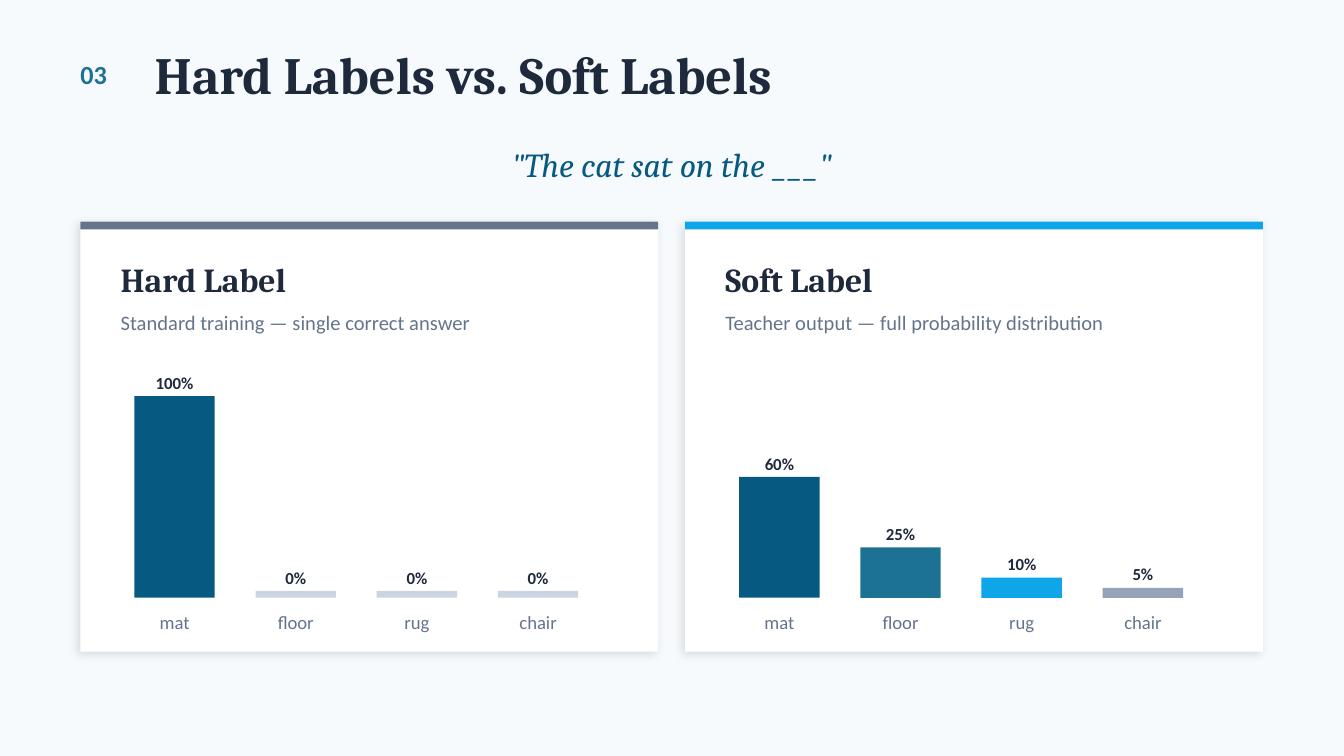
from lxml import etree
from pptx import Presentation
from pptx.dml.color import RGBColor
from pptx.enum import shapes, text
from pptx.oxml.ns import qn
from pptx.util import Cm, Pt

INK, SLATE, NAVY, TEAL, SKY = "1E293B", "64748B", "065A82", "1C7293", "0EA5E9"
PALE, GREY = "CBD5E1", "94A3B8"
SERIF, SANS = "Cambria", "Calibri"

WORDS = ["mat", "floor", "rug", "chair"]
CARDS = [
    {"title": "Hard Label", "note": "Standard training — single correct answer",
     "accent": SLATE, "values": [100, 0, 0, 0], "colors": [NAVY, PALE, PALE, PALE]},
    {"title": "Soft Label", "note": "Teacher output — full probability distribution",
     "accent": SKY, "values": [60, 25, 10, 5], "colors": [NAVY, TEAL, SKY, GREY]},
]

MARGIN, CARD_TOP, CARD_WIDTH, CARD_HEIGHT, CARD_STEP = 1.52, 4.19, 10.92, 8.13, 11.43
BAR_INSET, BAR_WIDTH, BAR_STEP = 1.02, 1.52, 2.29
BASELINE, FULL_HEIGHT, LEAST_HEIGHT = 11.3, 3.81, 0.13
LABEL_OVERHANG, VALUE_HEIGHT = 0.13, 0.51


def color(code):
    return RGBColor.from_string(code)


def write(box, words, size, font, ink, bold=False, italic=False, center=False):
    frame = box.text_frame
    frame.word_wrap = True
    frame.auto_size = text.MSO_AUTO_SIZE.NONE
    frame.vertical_anchor = text.MSO_ANCHOR.MIDDLE
    frame.margin_left = frame.margin_right = frame.margin_top = frame.margin_bottom = 0
    para = frame.paragraphs[0]
    para.alignment = text.PP_ALIGN.CENTER if center else text.PP_ALIGN.LEFT
    span = para.add_run()
    span.text = words
    span.font.size, span.font.name = Pt(size), font
    span.font.bold, span.font.italic = bold, italic
    span.font.color.rgb = color(ink)


def add_label(page, left, top, width, height, *style, **options):
    box = page.shapes.add_textbox(Cm(left), Cm(top), Cm(width), Cm(height))
    write(box, *style, **options)


def add_block(page, left, top, width, height, fill):
    block = page.shapes.add_shape(
        shapes.MSO_SHAPE.RECTANGLE, Cm(left), Cm(top), Cm(width), Cm(height))
    block.shadow.inherit = False
    block.fill.solid()
    block.fill.fore_color.rgb = color(fill)
    block.line.fill.background()
    return block


def add_shadow(block):
    effects = block._element.spPr.find(qn("a:effectLst"))
    shadow = etree.SubElement(
        effects, qn("a:outerShdw"), blurRad=str(Pt(5)), dist=str(Pt(2)),
        dir=str(135 * 60000), algn="bl", rotWithShape="0")
    tint = etree.SubElement(shadow, qn("a:srgbClr"), val="000000")
    etree.SubElement(tint, qn("a:alpha"), val="12000")


def add_bar(page, left, word, value, fill):
    height = max(FULL_HEIGHT * value / 100, LEAST_HEIGHT)
    top = BASELINE - height
    add_block(page, left, top, BAR_WIDTH, height, fill)
    label_left, label_width = left - LABEL_OVERHANG, BAR_WIDTH + 2 * LABEL_OVERHANG
    add_label(page, label_left, BASELINE + 0.13, label_width, 0.64,
              word, 10, SANS, SLATE, center=True)
    add_label(page, label_left, top - VALUE_HEIGHT, label_width, VALUE_HEIGHT,
              f"{value}%", 9, SANS, INK, bold=True, center=True)


def add_card(page, left, card):
    add_shadow(add_block(page, left, CARD_TOP, CARD_WIDTH, CARD_HEIGHT, "FFFFFF"))
    add_block(page, left, CARD_TOP, CARD_WIDTH, 0.15, card["accent"])
    add_label(page, left + 0.76, 4.83, 7.62, 0.89, card["title"], 18, SERIF, INK, bold=True)
    add_label(page, left + 0.76, 5.72, 9.4, 0.76, card["note"], 11, SANS, SLATE)
    for index, bar in enumerate(zip(WORDS, card["values"], card["colors"])):
        add_bar(page, left + BAR_INSET + index * BAR_STEP, *bar)


def main():
    deck = Presentation()
    deck.slide_width, deck.slide_height = Cm(25.4), Cm(14.29)
    page = deck.slides.add_slide(deck.slide_layouts[5])
    page.background.fill.solid()
    page.background.fill.fore_color.rgb = color("F7FAFC")

    title = page.shapes.title
    title.left, title.top, title.width, title.height = Cm(2.92), Cm(0.76), Cm(15.24), Cm(1.27)
    write(title, "Hard Labels vs. Soft Labels", 28, SERIF, INK, bold=True)
    add_label(page, MARGIN, 0.89, 1.52, 1.02, "03", 14, SANS, TEAL, bold=True)
    add_label(page, MARGIN, 2.54, 22.35, 1.14, '"The cat sat on the ___"',
              18, SERIF, NAVY, italic=True, center=True)
    for index, card in enumerate(CARDS):
        add_card(page, MARGIN + index * CARD_STEP, card)
    deck.save("out.pptx")


if __name__ == "__main__":
    main()
